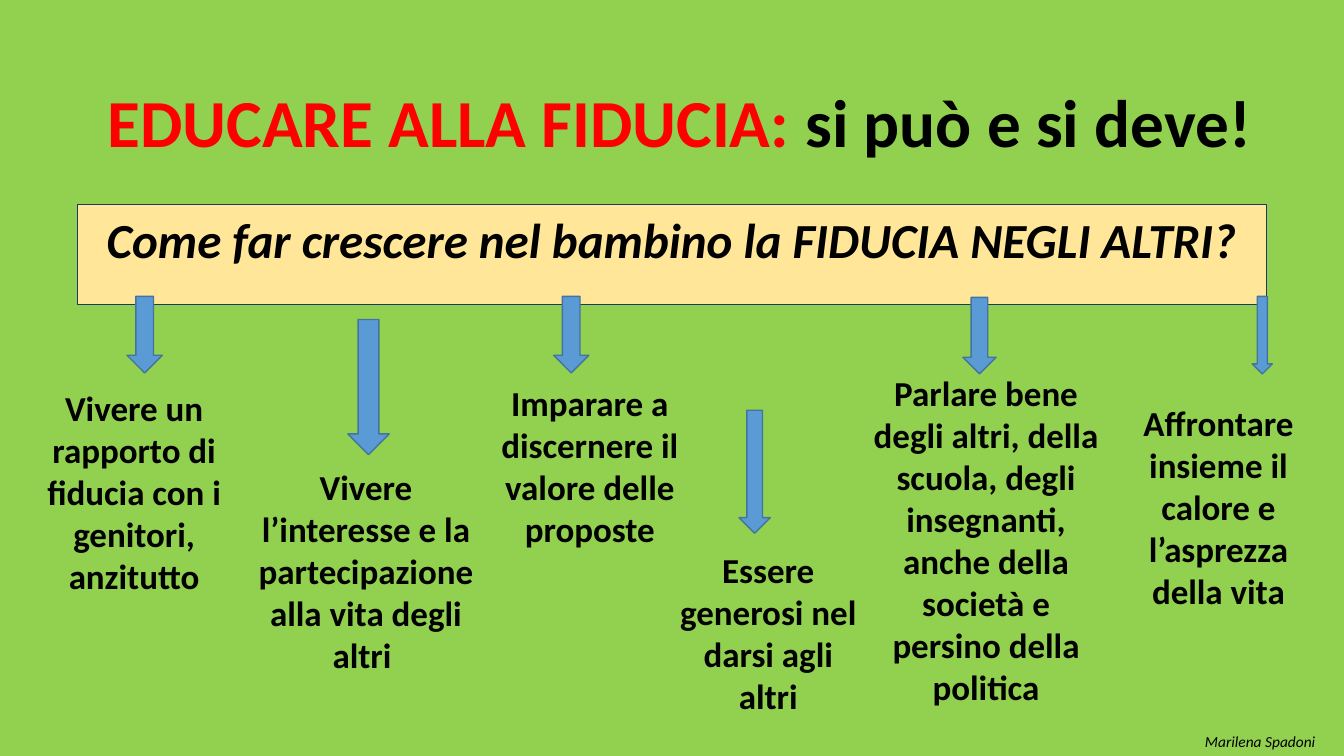
from pptx import Presentation
from pptx.dml.color import RGBColor
from pptx.enum.shapes import MSO_SHAPE
from pptx.enum.text import MSO_ANCHOR, PP_ALIGN
from pptx.util import Inches, Pt

COLORS = {
    "back": "92D050", "banner": "FFE699", "border": "203864",
    "arrow": "5B9BD5", "edge": "43739E", "accent": "FF0000", "text": "000000",
}

ADVICE = [
    ("Vivere un rapporto di fiducia con i genitori, anzitutto",
     (0.37, 3.79, 1.92, 2.2), (1.26, 2.94, 0.35, 0.76)),
    ("Vivere l’interesse e la partecipazione alla vita degli altri ",
     (2.43, 4.57, 2.4, 2.2), (3.45, 3.17, 0.41, 1.34)),
    ("Imparare a discernere il valore delle proposte",
     (4.85, 3.74, 2, 1.78), (5.49, 2.94, 0.35, 0.76)),
    ("Essere generosi nel darsi agli altri",
     (6.56, 5.39, 2.12, 1.78), (7.33, 4.07, 0.31, 1.22)),
    ("Parlare bene degli altri, della scuola, degli insegnanti, "
     "anche della società e persino della politica",
     (8.53, 3.64, 2.5, 3.47), (9.55, 2.95, 0.33, 0.76)),
    ("Affrontare insieme il calore e l’asprezza della vita",
     (11.17, 3.93, 1.83, 2.2), (12.42, 2.94, 0.2, 0.77)),
]


class Painter:
    """Draws styled elements on the current slide."""

    font = "Calibri"

    def __init__(self, slide):
        self.slide = slide

    def color(self, name):
        return RGBColor.from_string(COLORS[name])

    def backdrop(self, name):
        fill = self.slide.background.fill
        fill.solid()
        fill.fore_color.rgb = self.color(name)

    def style(self, run, size, color="text", bold=False, italic=False):
        font = run.font
        font.name, font.size = self.font, Pt(size)
        font.bold, font.italic = bold, italic
        font.color.rgb = self.color(color)

    def letter(self, shape, parts, size, align=PP_ALIGN.CENTER, **look):
        frame = shape.text_frame
        frame.word_wrap = True
        frame.vertical_anchor = MSO_ANCHOR.TOP
        line = frame.paragraphs[0]
        line.alignment = align
        for text, color in parts:
            run = line.add_run()
            run.text = text
            self.style(run, size, color, **look)

    def label(self, box, parts, size, **look):
        shape = self.slide.shapes.add_textbox(*map(Inches, box))
        self.letter(shape, parts, size, **look)

    def block(self, kind, box, fill, line, width):
        shape = self.slide.shapes.add_shape(kind, *map(Inches, box))
        shape.shadow.inherit = False
        shape.fill.solid()
        shape.fill.fore_color.rgb = self.color(fill)
        shape.line.color.rgb = self.color(line)
        shape.line.width = Pt(width)
        return shape

    def banner(self, box, text):
        shape = self.block(MSO_SHAPE.RECTANGLE, box, "banner", "border", 0.75)
        self.letter(shape, [(text, "text")], 35, bold=True, italic=True)

    def arrow(self, box):
        self.block(MSO_SHAPE.DOWN_ARROW, box, "arrow", "edge", 1)


def main():
    deck = Presentation()
    deck.slide_width, deck.slide_height = Inches(13.33), Inches(7.5)
    painter = Painter(deck.slides.add_slide(deck.slide_layouts[6]))
    painter.backdrop("back")
    painter.label(
        (0.97, 0.75, 11.73, 0.91),
        [("EDUCARE ALLA FIDUCIA: ", "accent"), ("si può e si deve!", "text")],
        48, align=PP_ALIGN.LEFT, bold=True)
    painter.banner((0.77, 2.03, 11.79, 0.99),
                   "Come far crescere nel bambino la FIDUCIA NEGLI ALTRI?")
    for text, place, arrow in ADVICE:
        painter.label(place, [(text, "text")], 25, bold=True)
        painter.arrow(arrow)
    painter.label((11.72, 7.21, 1.56, 0.29),
                  [("Marilena Spadoni", "text")], 11, italic=True)
    deck.save("out.pptx")


if __name__ == "__main__":
    main()
